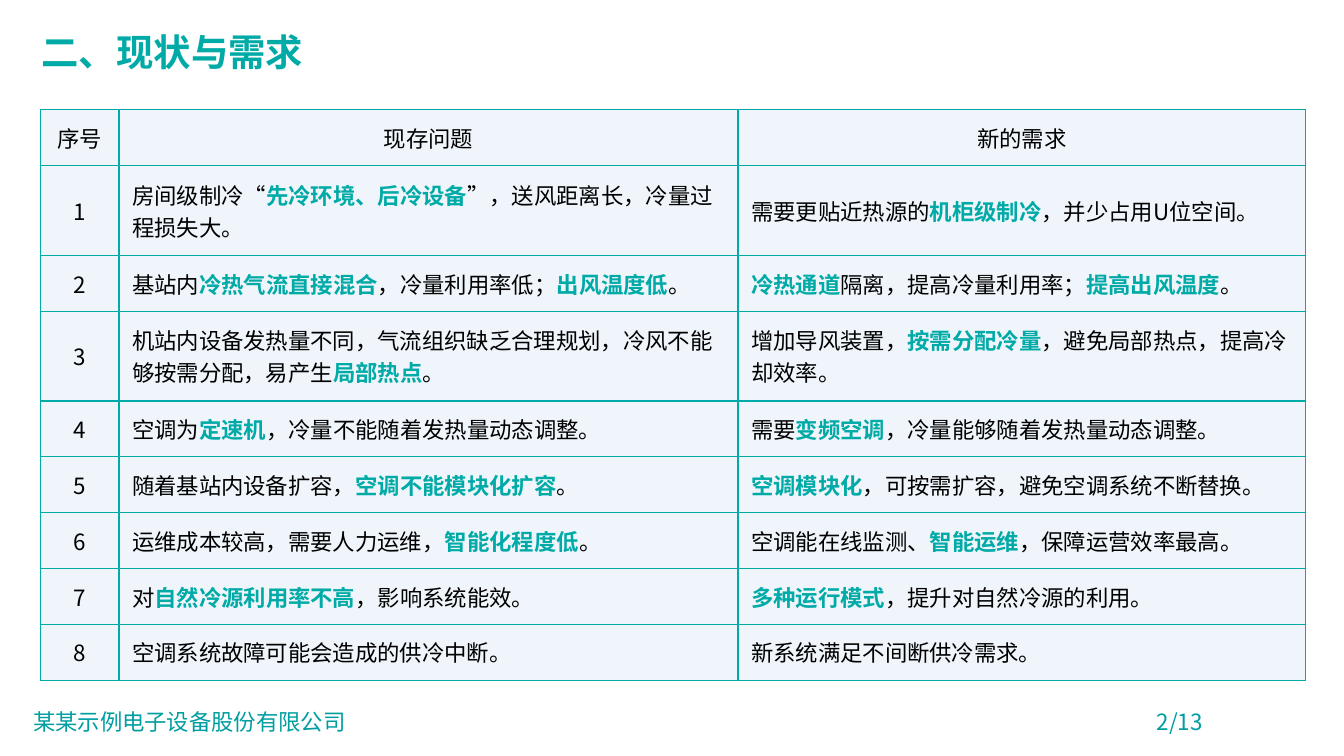
from lxml import etree
from pptx import Presentation
from pptx.dml.color import RGBColor
from pptx.enum.text import MSO_ANCHOR, PP_ALIGN
from pptx.oxml.ns import qn
from pptx.util import Inches, Pt

LEFT, CENTER = PP_ALIGN.LEFT, PP_ALIGN.CENTER
TOP, MIDDLE = MSO_ANCHOR.TOP, MSO_ANCHOR.MIDDLE
TEAL = RGBColor(0x00, 0xAA, 0xA6)
FOOTER_TEAL = RGBColor(0x00, 0x9E, 0xA1)
BLACK = RGBColor(0, 0, 0)
CELL_FILL = RGBColor(0xEF, 0xF5, 0xFB)
FONT = "Noto Sans CJK SC"

# Content: text between asterisks is emphasised
TITLE = "二、现状与需求"
COMPANY = "某某示例电子设备股份有限公司"
PAGE = "2/13"
HEADINGS = ("序号", "现存问题", "新的需求")
ISSUES = [
    ("房间级制冷“*先冷环境、后冷设备*”，送风距离长，冷量过程损失大。",
     "需要更贴近热源的*机柜级制冷*，并少占用U位空间。"),
    ("基站内*冷热气流直接混合*，冷量利用率低；*出风温度低*。",
     "*冷热通道*隔离，提高冷量利用率；*提高出风温度*。"),
    ("机站内设备发热量不同，气流组织缺乏合理规划，冷风不能够按需分配，易产生*局部热点*。",
     "增加导风装置，*按需分配冷量*，避免局部热点，提高冷却效率。"),
    ("空调为*定速机*，冷量不能随着发热量动态调整。",
     "需要*变频空调*，冷量能够随着发热量动态调整。"),
    ("随着基站内设备扩容，*空调不能模块化扩容*。",
     "*空调模块化*，可按需扩容，避免空调系统不断替换。"),
    ("运维成本较高，需要人力运维，*智能化程度低*。",
     "空调能在线监测、*智能运维*，保障运营效率最高。"),
    ("对*自然冷源利用率不高*，影响系统能效。",
     "*多种运行模式*，提升对自然冷源的利用。"),
    ("空调系统故障可能会造成的供冷中断。", "新系统满足不间断供冷需求。"),
]

# Table grid, in inches
TABLE_LEFT, TABLE_TOP, TABLE_HEIGHT = 0.4, 1.09, 5.66
COLUMNS = (0.78, 6.14, 5.63)
TALL_ROWS, TALL = (1, 3), 0.89
ROW_COUNT = len(ISSUES) + 1
SHORT = (TABLE_HEIGHT - TALL * len(TALL_ROWS)) / (ROW_COUNT - len(TALL_ROWS))


def write(paragraph, text, size, color, bold=False, align=LEFT):
    paragraph.alignment = align
    font = paragraph.font
    font.name, font.size, font.bold = FONT, Pt(size), bold
    font.color.rgb = color
    defaults = paragraph._p.pPr.find(qn("a:defRPr"))
    etree.SubElement(defaults, qn("a:ea")).set("typeface", FONT)
    for order, part in enumerate(text.split("*")):
        if part:
            run = paragraph.add_run()
            run.text = part
            if order % 2:
                run.font.bold = True
                run.font.color.rgb = TEAL


def set_margins(holder, across, down):
    holder.margin_left = holder.margin_right = Inches(across)
    holder.margin_top = holder.margin_bottom = Inches(down)


def add_borders(cell):
    properties = cell._tc.get_or_add_tcPr()
    for order, side in enumerate(("lnL", "lnR", "lnT", "lnB")):
        line = etree.Element(qn("a:" + side), w=str(Pt(1)))
        fill = etree.SubElement(line, qn("a:solidFill"))
        etree.SubElement(fill, qn("a:srgbClr"), val=str(TEAL))
        properties.insert(order, line)


def add_footer(slide, text, left, width, align):
    box = slide.shapes.add_textbox(Inches(left), Inches(6.98), Inches(width), Inches(0.37))
    box.text_frame.word_wrap = align == CENTER
    write(box.text_frame.paragraphs[0], text, 16, FOOTER_TEAL, align=align)


def main():
    deck = Presentation()
    deck.slide_width, deck.slide_height = Inches(13.33), Inches(7.5)
    slide = deck.slides.add_slide(deck.slide_layouts[5])

    # Title
    title = slide.shapes.title
    title.left, title.top = Inches(0.28), Inches(0.22)
    title.width, title.height = Inches(2.88), Inches(0.58)
    frame = title.text_frame
    frame.word_wrap, frame.vertical_anchor = False, TOP
    set_margins(frame, 0.13, 0.07)
    write(frame.paragraphs[0], TITLE, 26.7, TEAL, bold=True)

    # Problems and needs
    table = slide.shapes.add_table(
        ROW_COUNT, len(COLUMNS), Inches(TABLE_LEFT), Inches(TABLE_TOP),
        Inches(sum(COLUMNS)), Inches(TABLE_HEIGHT)).table
    table.first_row = table.horz_banding = False
    for column, width in zip(table.columns, COLUMNS):
        column.width = Inches(width)
    rows = [HEADINGS] + [(str(n), *issue) for n, issue in enumerate(ISSUES, 1)]
    for r, texts in enumerate(rows):
        table.rows[r].height = Inches(TALL if r in TALL_ROWS else SHORT)
        for c, text in enumerate(texts):
            cell = table.cell(r, c)
            cell.fill.solid()
            cell.fill.fore_color.rgb = CELL_FILL
            cell.vertical_anchor = MIDDLE
            set_margins(cell, 0.13, 0.07)
            add_borders(cell)
            align = CENTER if r == 0 or c == 0 else LEFT
            write(cell.text_frame.paragraphs[0], text, 16, BLACK, align=align)

    # Footer
    add_footer(slide, COMPANY, 0.23, 3.34, LEFT)
    add_footer(slide, PAGE, 10.95, 1.5, CENTER)
    deck.save("out.pptx")


if __name__ == "__main__":
    main()
